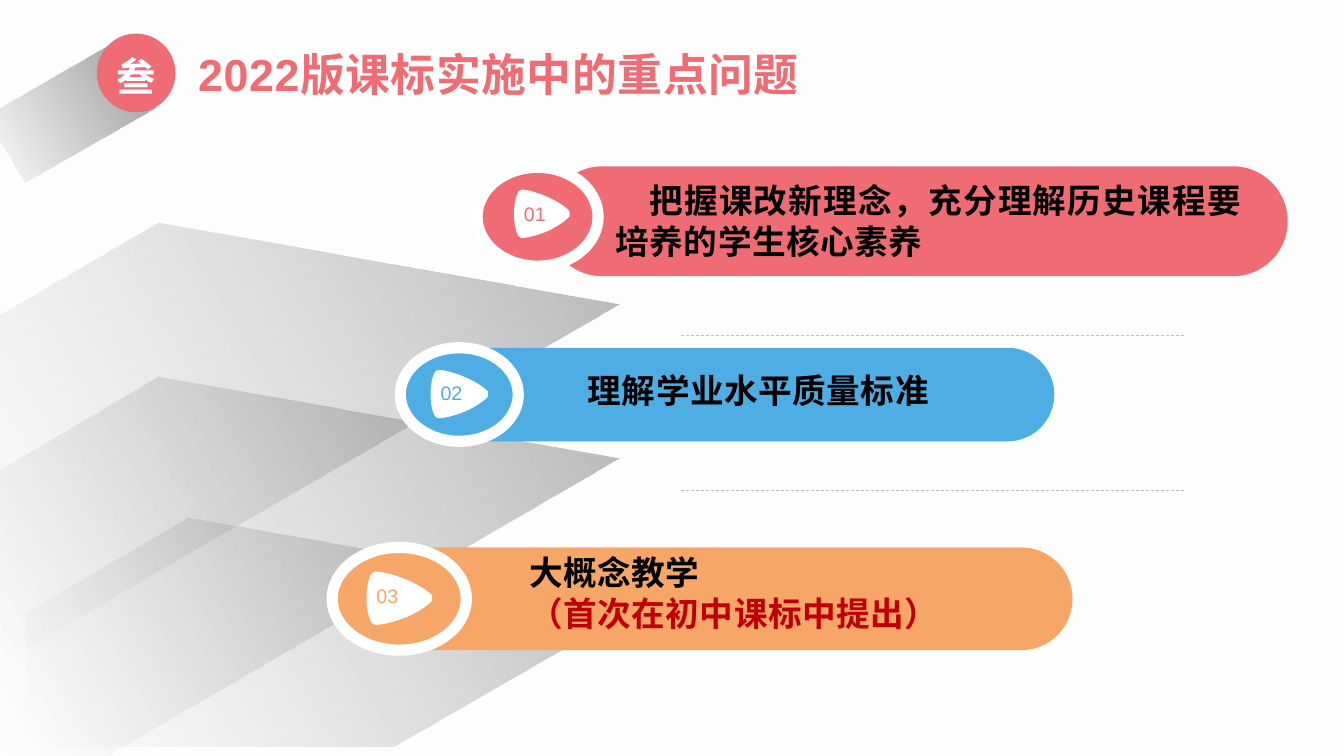
from dataclasses import dataclass
from math import cos, radians, sin

from lxml.etree import SubElement
from pptx import Presentation
from pptx.dml.color import RGBColor
from pptx.enum.dml import MSO_LINE
from pptx.enum.shapes import MSO_CONNECTOR, MSO_SHAPE
from pptx.enum.text import MSO_ANCHOR, MSO_AUTO_SIZE, PP_ALIGN
from pptx.oxml.ns import qn
from pptx.util import Pt

Point = tuple[float, float]
Box = tuple[float, float, float, float]

CORAL, BLUE, ORANGE = "EF6C74", "4EADE3", "F6A667"
WHITE, BLACK, RED = "FFFFFF", "000000", "C00000"
GREY, DARK_GREY = "BFBFBF", "808080"
SHADOW_ROTATION = 330

# Rounded play triangle in a unit square: a start, then cubic curves.
PLAY_START = (0.62, 0.85)
PLAY_CURVES = [
    ((0.31, 1), (0.14, 1), (0.14, 1)),
    ((0.12, 0.99), (0.09, 0.98), (0.08, 0.96)),
    ((0.08, 0.96), (0, 0.84), (0, 0.5)),
    ((0, 0.16), (0.08, 0.04), (0.08, 0.04)),
    ((0.09, 0.02), (0.12, 0.01), (0.14, 0)),
    ((0.14, 0), (0.31, 0), (0.62, 0.16)),
    ((0.92, 0.32), (1, 0.45), (1, 0.45)),
    ((1, 0.47), (1, 0.53), (1, 0.55)),
    ((1, 0.55), (0.92, 0.68), PLAY_START),
]


@dataclass
class LongShadow:
    points: list[Point]
    opacity: int
    end_color: str


@dataclass
class Topic:
    number: str
    color: str
    bar: Box
    badge: Box
    play: Box
    number_box: Box
    text_box: Box
    lines: list[tuple[str, str]]


SHADOWS = [
    LongShadow([(113.6, 159.2), (442.7, 217.5), (-2.4, 474.6), (-2.4, 226.9)], 30, DARK_GREY),
    LongShadow([(113.6, 268.9), (442.7, 327.2), (70.4, 543.2), (-2.4, 543.2), (-2.4, 337.3)],
               30, DARK_GREY),
    LongShadow([(135.2, 370), (464.2, 428.3), (281.3, 533.6), (19.3, 533.6), (19.3, 437.7)],
               30, DARK_GREY),
    LongShadow([(110.9, 77), (82.1, 29.5), (-10.1, 82.8), (18, 130.3)], 40, BLACK),
]

TOPICS = [
    Topic("01", CORAL, (391, 118.8, 528.8, 78.5), (340.8, 119.5, 86.4, 70.6),
          (367.2, 135.4, 39.6, 34.6), (367.2, 140.4, 36, 24.5), (432.7, 125.3, 461.3, 65.5),
          [("把握课改新理念，充分理解历史课程要培养的学生核心素养", BLACK)]),
    Topic("02", BLUE, (285.8, 248.4, 467.3, 66.8), (286, 248.4, 84.2, 66.8),
          (307.6, 264.2, 41, 34.6), (307.6, 268.6, 38.2, 24.5), (388.8, 260.6, 286.6, 65.5),
          [("理解学业水平质量标准", BLACK)]),
    Topic("03", ORANGE, (236.9, 391, 529.2, 73.4), (237.3, 391, 95.8, 73.4),
          (261.8, 408.2, 46.8, 38.2), (261.8, 413.8, 43.2, 26.6), (347, 391, 433.4, 84.2),
          [("大概念教学", BLACK), ("（首次在初中课标中提出）", RED)]),
]


def rgb(value: str) -> RGBColor:
    return RGBColor.from_string(value)


def points_of(box: Box) -> list[Pt]:
    return [Pt(length) for length in box]


def rotate(point: Point, degrees: float) -> Point:
    """Turn a point clockwise about the slide's top left corner."""
    x, y = point
    angle = radians(degrees)
    return x * cos(angle) - y * sin(angle), x * sin(angle) + y * cos(angle)


def add_outline(slide, points: list[Point]):
    vertices = [(Pt(x), Pt(y)) for x, y in points]
    builder = slide.shapes.build_freeform(*vertices[0], scale=1.0)
    builder.add_line_segments(vertices[1:], close=True)
    shape = builder.convert_to_shape()
    shape.shadow.inherit = False
    shape.line.fill.background()
    return shape


def add_long_shadow(slide, shadow: LongShadow) -> None:
    """Draw the outline level, then tilt it so the gradient tilts with it."""
    level = [rotate(point, -SHADOW_ROTATION) for point in shadow.points]
    shape = add_outline(slide, level)
    center_x, center_y = rotate(
        (shape.left + shape.width / 2, shape.top + shape.height / 2), SHADOW_ROTATION)
    shape.left = round(center_x - shape.width / 2)
    shape.top = round(center_y - shape.height / 2)
    shape.rotation = SHADOW_ROTATION
    shape.fill.gradient()
    shape.fill.gradient_angle = 180
    for stop, color in zip(shape.fill.gradient_stops, (BLACK, shadow.end_color)):
        stop.color.rgb = rgb(color)
    stop_colors = shape._element.spPr.iter(qn("a:srgbClr"))
    for stop_color, opacity in zip(stop_colors, (shadow.opacity, 0)):
        SubElement(stop_color, qn("a:alpha")).set("val", str(opacity * 1000))


def add_preset(slide, kind: MSO_SHAPE, box: Box, color: str):
    shape = slide.shapes.add_shape(kind, *points_of(box))
    shape.shadow.inherit = False
    shape.fill.solid()
    shape.fill.fore_color.rgb = rgb(color)
    shape.line.fill.background()
    return shape


def add_play_mark(slide, box: Box) -> None:
    """Outline the mark with straight sides, then bend each side into its curve."""
    left, top, width, height = box
    corners = [PLAY_START] + [curve[-1] for curve in PLAY_CURVES]
    shape = add_outline(slide, [(left + x * width, top + y * height) for x, y in corners])
    shape.fill.solid()
    shape.fill.fore_color.rgb = rgb(WHITE)
    sides = list(shape._element.spPr.iter(qn("a:lnTo")))
    for side, curve in zip(sides, PLAY_CURVES):
        bend = side.makeelement(qn("a:cubicBezTo"), {})
        for x, y in curve:
            point = SubElement(bend, qn("a:pt"))
            point.set("x", str(round(x * shape.width)))
            point.set("y", str(round(y * shape.height)))
        side.getparent().replace(side, bend)


def add_run(paragraph, text: str, size: float, font: str, color: str,
            bold: bool = False, spacing: float = 0) -> None:
    run = paragraph.add_run()
    run.text = text
    run.font.size = Pt(size)
    run.font.name = font
    run.font.bold = bold
    run.font.color.rgb = rgb(color)
    if spacing:
        run.font._element.set("spc", str(round(spacing * 100)))


def add_text_frame(slide, box: Box, wrap: bool):
    frame = slide.shapes.add_textbox(*points_of(box)).text_frame
    frame.word_wrap = wrap
    return frame


def add_topic(slide, topic: Topic) -> None:
    bar = add_preset(slide, MSO_SHAPE.ROUNDED_RECTANGLE, topic.bar, topic.color)
    bar.adjustments[0] = 0.5
    badge = add_preset(slide, MSO_SHAPE.OVAL, topic.badge, topic.color)
    badge.line.color.rgb = rgb(WHITE)
    badge.line.width = Pt(8)
    add_play_mark(slide, topic.play)
    number = add_text_frame(slide, topic.number_box, False).paragraphs[0]
    add_run(number, topic.number, 14, "Arial", topic.color)
    frame = add_text_frame(slide, topic.text_box, True)
    for index, (text, color) in enumerate(topic.lines):
        paragraph = frame.add_paragraph() if index else frame.paragraphs[0]
        paragraph.alignment = PP_ALIGN.JUSTIFY
        paragraph._p.get_or_add_pPr().set("indent", str(Pt(24)))
        add_run(paragraph, text, 24, "Calibri", color, True, 0.4)


def add_header(slide) -> None:
    add_preset(slide, MSO_SHAPE.OVAL, (69.1, 24, 56.2, 56.2), CORAL)
    numeral = add_text_frame(slide, (75.6, 33.8, 42.5, 41), False).paragraphs[0]
    numeral.alignment = PP_ALIGN.CENTER
    add_run(numeral, "叁", 28, "Arial", WHITE, True)
    title = slide.shapes.title
    title.left, title.top, title.width, title.height = points_of((134.4, 29.5, 447.8, 46.1))
    frame = title.text_frame
    frame.word_wrap = True
    frame.auto_size = MSO_AUTO_SIZE.NONE
    frame.vertical_anchor = MSO_ANCHOR.TOP
    frame.paragraphs[0].alignment = PP_ALIGN.LEFT
    add_run(frame.paragraphs[0], "2022版课标实施中的重点问题", 32, "Arial", CORAL, True, 0.4)


def add_divider(slide, y: float) -> None:
    line = slide.shapes.add_connector(
        MSO_CONNECTOR.STRAIGHT, Pt(486.4), Pt(y), Pt(845.6), Pt(y))
    line.line.color.rgb = rgb(GREY)
    line.line.width = Pt(0.5)
    line.line.dash_style = MSO_LINE.DASH
    SubElement(line._element.spPr, qn("a:effectLst"))


def main() -> None:
    presentation = Presentation()
    presentation.slide_width, presentation.slide_height = Pt(960), Pt(540)
    slide = presentation.slides.add_slide(presentation.slide_layouts[5])
    slide.background.fill.solid()
    slide.background.fill.fore_color.rgb = rgb("FDFDFD")
    for shadow in SHADOWS:
        add_long_shadow(slide, shadow)
    add_header(slide)
    for topic in TOPICS:
        add_topic(slide, topic)
    for y in (239.4, 350.2):
        add_divider(slide, y)
    presentation.save("out.pptx")


if __name__ == "__main__":
    main()
